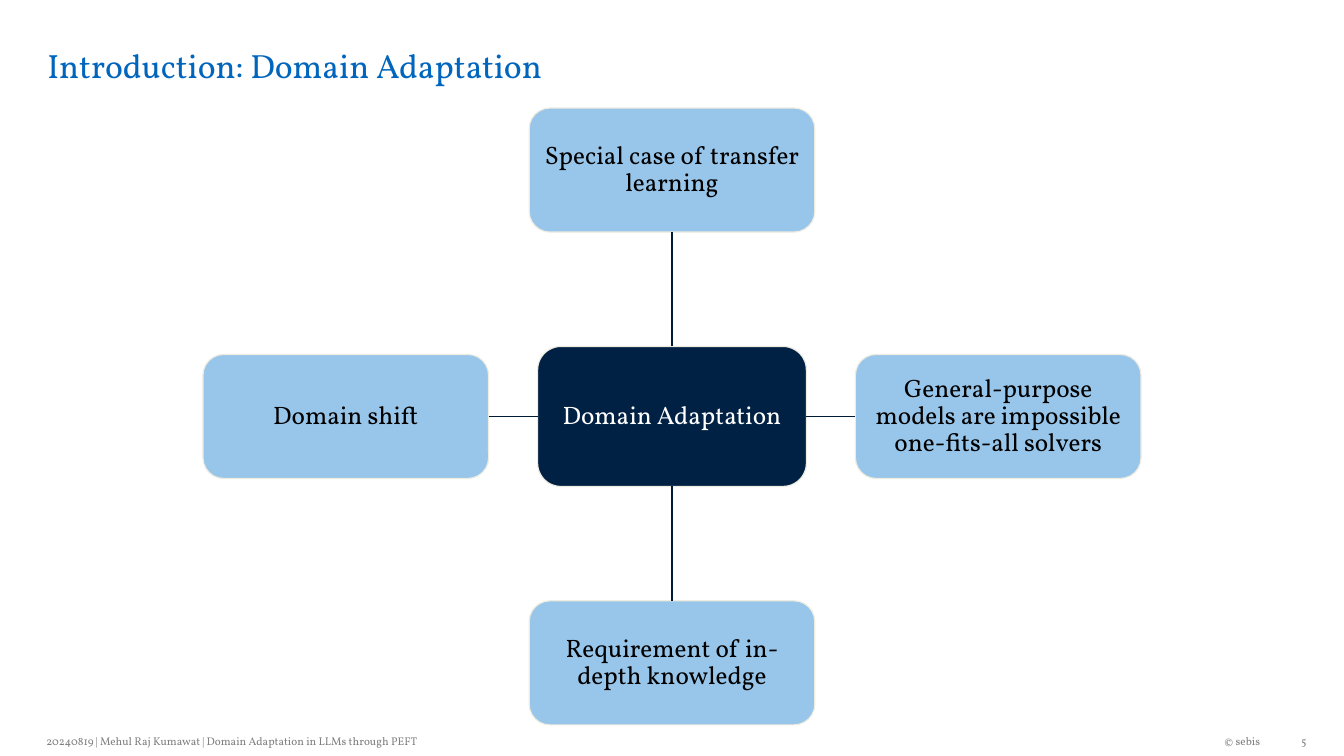
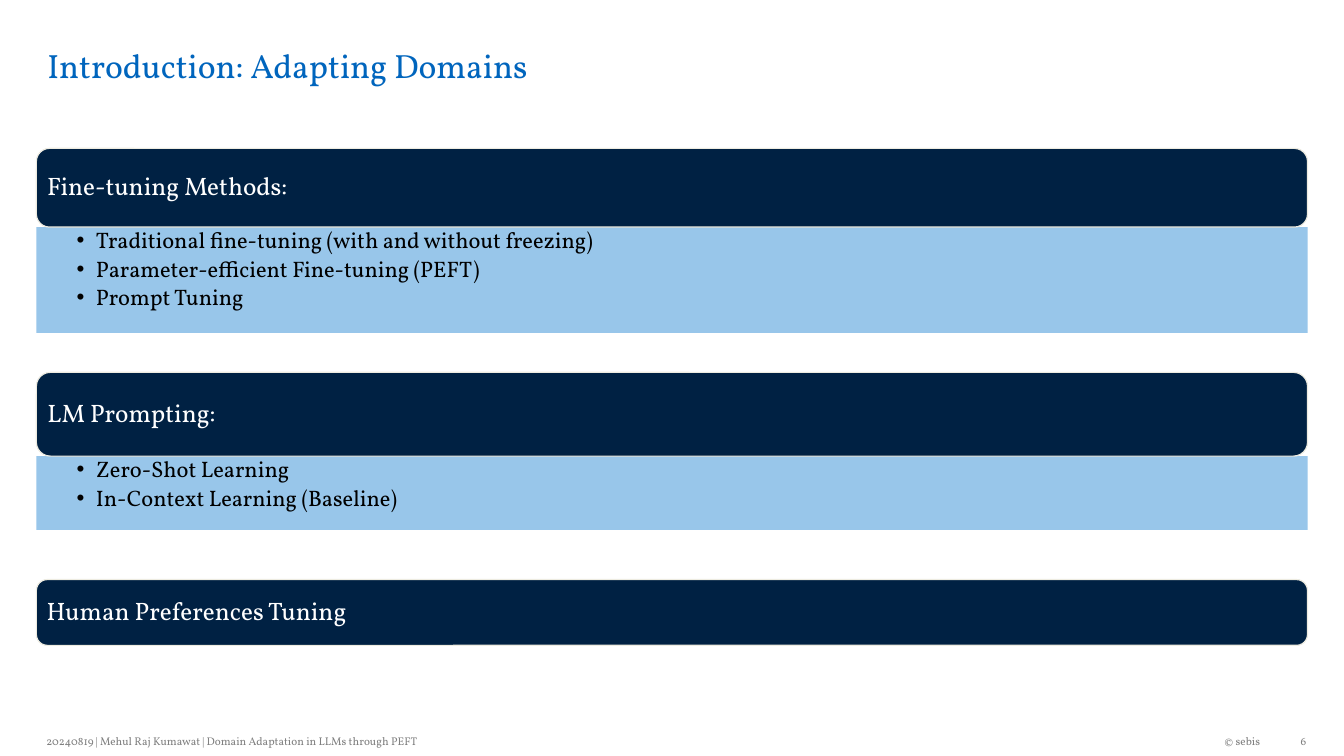
"""Build two introduction slides on domain adaptation."""
from dataclasses import dataclass
from typing import Any

from lxml import etree
from pptx import Presentation
from pptx.dml.color import RGBColor
from pptx.enum.shapes import MSO_CONNECTOR, MSO_SHAPE
from pptx.enum.text import MSO_ANCHOR, MSO_AUTO_SIZE, PP_ALIGN
from pptx.oxml.ns import qn
from pptx.util import Pt

STRAIGHT = MSO_CONNECTOR.STRAIGHT
ROUNDED = MSO_SHAPE.ROUNDED_RECTANGLE
TOP, MIDDLE, BOTTOM = MSO_ANCHOR.TOP, MSO_ANCHOR.MIDDLE, MSO_ANCHOR.BOTTOM
LEFT, CENTER, RIGHT = PP_ALIGN.LEFT, PP_ALIGN.CENTER, PP_ALIGN.RIGHT
NO_AUTOFIT = MSO_AUTO_SIZE.NONE

COLORS = {
    "title": "0065BD",
    "footer": "808080",
    "dark": "002143",
    "light": "98C6EA",
    "border": "EEECE1",
    "connector": "001A36",
    "on_dark": "FFFFFF",
    "on_light": "000000",
}
FONT = "Vollkorn"
LINE_WIDTH = 0.85
PAGE_WIDTH, PAGE_HEIGHT = 960, 540
TITLE_ONLY, TWO_CONTENT = 5, 3
FIRST_NUMBER = 5
BULLET_INDENT = 13.7
FOOTER_TOP, FOOTER_HEIGHT = 517.5, 23


@dataclass(frozen=True)
class Area:
    left: float
    top: float
    width: float
    height: float


@dataclass(frozen=True)
class TextStyle:
    size: float
    color: str
    align: Any = LEFT
    anchor: Any = MIDDLE
    insets: tuple[float, float, float, float] = (7.2, 3.6, 7.2, 3.6)
    line_spacing: float = 1.0
    space_after: float = 0


@dataclass(frozen=True)
class Footer:
    area: Area
    text: str
    style: TextStyle


@dataclass(frozen=True)
class Satellite:
    text: str
    column: int
    row: int
    hub_site: int
    own_site: int


@dataclass(frozen=True)
class Section:
    heading: str
    top: float
    height: float
    items: tuple[str, ...] = ()
    list_height: float = 0


TITLE_AREA = Area(26.6, 3.6, 834, 57)
TITLE_STYLE = TextStyle(24, "title", anchor=BOTTOM, insets=(7.2, 0, 7.2, 0))
FOOTER_STYLE = TextStyle(8, "footer")
OWNER_STYLE = TextStyle(8, "footer", align=RIGHT)
NUMBER_STYLE = TextStyle(8, "footer", align=RIGHT, insets=(7.2, 3.6, 0, 3.6))
FOOTERS = (
    Footer(Area(26, FOOTER_TOP, 453.6, FOOTER_HEIGHT),
           "20240819 | Mehul Raj Kumawat | Domain Adaptation in LLMs through PEFT",
           FOOTER_STYLE),
    Footer(Area(738.8, FOOTER_TOP, 168.5, FOOTER_HEIGHT), "© sebis", OWNER_STYLE),
)
NUMBER_AREA = Area(907.2, FOOTER_TOP, 26, FOOTER_HEIGHT)

NODE_INSETS = (3.6, 3.6, 3.6, 3.6)
HUB_STYLE = TextStyle(18, "on_dark", CENTER, MIDDLE, NODE_INSETS, 0.9, 6.3)
SATELLITE_STYLE = TextStyle(18, "on_light", CENTER, MIDDLE, NODE_INSETS, 0.9, 6.3)
HEADING_STYLE = TextStyle(18, "on_dark", LEFT, MIDDLE, (5, 5, 5, 5), 0.9, 6.3)
LIST_STYLE = TextStyle(16, "on_light", LEFT, TOP, (28.8, 1.6, 8.6, 1.6), 0.9, 3.2)

HUB_CENTER = (480, 297.5)
HUB_SIZE = (192, 100)
SATELLITE_SIZE = (204, 88.6)
SATELLITE_STEP = (233, 176)
SATELLITES = (
    Satellite("Special case of transfer learning", 0, -1, 0, 2),
    Satellite("General-purpose models are impossible one-fits-all solvers", 1, 0, 3, 1),
    Satellite("Requirement of in-depth knowledge", 0, 1, 2, 0),
    Satellite("Domain shift", -1, 0, 1, 3),
)

SECTION_LEFT, SECTION_WIDTH = 26, 908
SECTIONS = (
    Section("Fine-tuning Methods:", 106, 56.2,
            ("Traditional fine-tuning (with and without freezing)",
             "Parameter-efficient Fine-tuning (PEFT)", "Prompt Tuning"), 75.6),
    Section("LM Prompting:", 266, 59.8,
            ("Zero-Shot Learning", "In-Context Learning (Baseline)"), 52.6),
    Section("Human Preferences Tuning", 414, 47),
)


def apply_values(target: Any, values: dict[str, Any]) -> None:
    for name, value in values.items():
        setattr(target, name, value)


def rgb(name: str) -> RGBColor:
    return RGBColor.from_string(COLORS[name])


def bounds(area: Area) -> tuple[Pt, Pt, Pt, Pt]:
    return Pt(area.left), Pt(area.top), Pt(area.width), Pt(area.height)


def place(box: Any, area: Area) -> None:
    apply_values(box, dict(zip(("left", "top", "width", "height"), bounds(area))))


def centered(center: tuple[float, float], size: tuple[float, float]) -> Area:
    return Area(center[0] - size[0] / 2, center[1] - size[1] / 2, *size)


def write(box: Any, lines: tuple[str, ...], style: TextStyle) -> None:
    frame = box.text_frame
    sides = ("margin_left", "margin_top", "margin_right", "margin_bottom")
    apply_values(frame, {
        "word_wrap": True,
        "auto_size": NO_AUTOFIT,
        "vertical_anchor": style.anchor,
        **{side: Pt(inset) for side, inset in zip(sides, style.insets)},
    })
    for index, line in enumerate(lines):
        para = frame.add_paragraph() if index else frame.paragraphs[0]
        apply_values(para, {
            "alignment": style.align,
            "line_spacing": style.line_spacing,
            "space_before": Pt(0),
            "space_after": Pt(style.space_after),
        })
        span = para.add_run()
        span.text = line
        apply_values(span.font, {"name": FONT, "size": Pt(style.size)})
        span.font.color.rgb = rgb(style.color)


def paint(box: Any, color: str) -> None:
    box.fill.solid()
    box.fill.fore_color.rgb = rgb(color)


def add_rounded(page: Any, area: Area, text: str, fill: str, style: TextStyle) -> Any:
    box = page.shapes.add_shape(ROUNDED, *bounds(area))
    box.shadow.inherit = False
    paint(box, fill)
    box.line.color.rgb = rgb("border")
    box.line.width = Pt(LINE_WIDTH)
    write(box, (text,), style)
    return box


def join(page: Any, start: Any, start_site: int, end: Any, end_site: int) -> None:
    connector = page.shapes.add_connector(STRAIGHT, 0, 0, 0, 0)
    connector.begin_connect(start, start_site)
    connector.end_connect(end, end_site)
    connector.line.color.rgb = rgb("connector")
    connector.line.width = Pt(LINE_WIDTH)
    etree.SubElement(connector._element.spPr, qn("a:effectLst"))


def add_page(deck: Any, layout: int, title: str) -> Any:
    page = deck.slides.add_slide(deck.slide_layouts[layout])
    place(page.shapes.title, TITLE_AREA)
    write(page.shapes.title, (title,), TITLE_STYLE)
    number = str(FIRST_NUMBER + len(deck.slides) - 1)
    for footer in (*FOOTERS, Footer(NUMBER_AREA, number, NUMBER_STYLE)):
        box = page.shapes.add_textbox(*bounds(footer.area))
        write(box, (footer.text,), footer.style)
    return page


def fill_list(box: Any, area: Area, items: tuple[str, ...]) -> None:
    place(box, area)
    paint(box, "light")
    write(box, items, LIST_STYLE)
    for para in box.text_frame.paragraphs:
        properties = para._p.get_or_add_pPr()
        properties.set("marL", str(Pt(BULLET_INDENT)))
        properties.set("indent", str(-Pt(BULLET_INDENT)))


def build_hub_page(deck: Any) -> None:
    page = add_page(deck, TITLE_ONLY, "Introduction: Domain Adaptation")
    hub = add_rounded(page, centered(HUB_CENTER, HUB_SIZE), "Domain Adaptation",
                      "dark", HUB_STYLE)
    for satellite in SATELLITES:
        center = (HUB_CENTER[0] + satellite.column * SATELLITE_STEP[0],
                  HUB_CENTER[1] + satellite.row * SATELLITE_STEP[1])
        box = add_rounded(page, centered(center, SATELLITE_SIZE), satellite.text,
                          "light", SATELLITE_STYLE)
        join(page, hub, satellite.hub_site, box, satellite.own_site)


def build_methods_page(deck: Any) -> None:
    page = add_page(deck, TWO_CONTENT, "Introduction: Adapting Domains")
    bodies = iter([box for box in page.placeholders if box.placeholder_format.idx])
    for section in SECTIONS:
        heading = Area(SECTION_LEFT, section.top, SECTION_WIDTH, section.height)
        add_rounded(page, heading, section.heading, "dark", HEADING_STYLE)
        if section.items:
            panel = Area(SECTION_LEFT, section.top + section.height,
                         SECTION_WIDTH, section.list_height)
            fill_list(next(bodies), panel, section.items)


def main() -> None:
    deck = Presentation()
    deck.slide_width, deck.slide_height = Pt(PAGE_WIDTH), Pt(PAGE_HEIGHT)
    build_hub_page(deck)
    build_methods_page(deck)
    deck.save("out.pptx")


if __name__ == "__main__":
    main()
